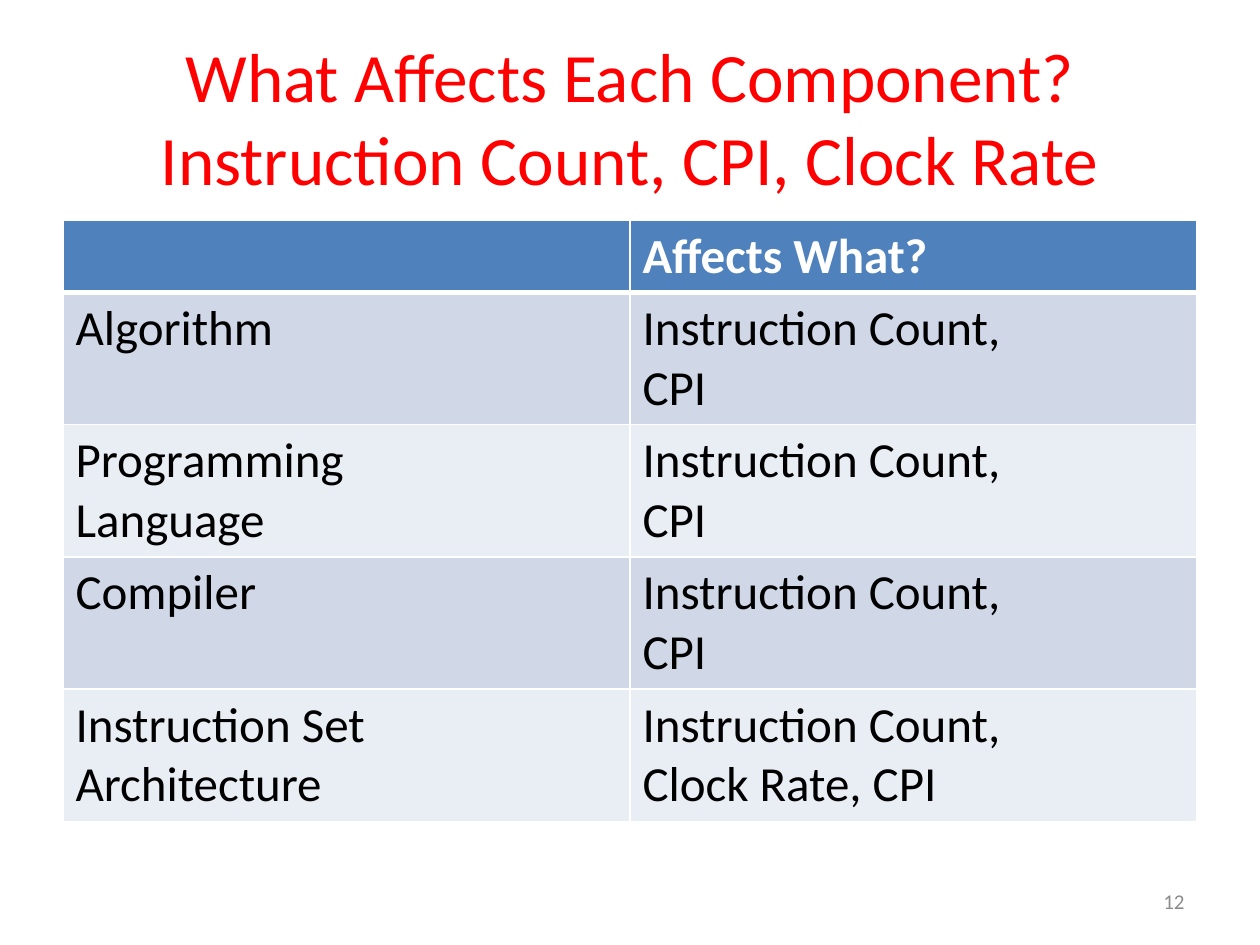
from lxml import etree
from pptx import Presentation
from pptx.dml.color import RGBColor
from pptx.enum.text import MSO_ANCHOR, PP_ALIGN
from pptx.oxml.ns import qn
from pptx.util import Inches, Pt

LEFT, CENTER, RIGHT = PP_ALIGN.LEFT, PP_ALIGN.CENTER, PP_ALIGN.RIGHT
MIDDLE = MSO_ANCHOR.MIDDLE

TITLE = "What Affects Each Component? Instruction Count, CPI, Clock Rate"
PAGE_NUMBER = "12"
ROWS = [
    ("", "Affects What?"),
    ("Algorithm", "Instruction Count,\nCPI"),
    ("Programming\nLanguage", "Instruction Count,\nCPI"),
    ("Compiler", "Instruction Count,\nCPI"),
    ("Instruction Set Architecture", "Instruction Count,\nClock Rate, CPI"),
]
HEADER_FILL = "4F81BD"
BAND_FILLS = ("E9EDF4", "D0D8E8")
WHITE = "FFFFFF"
HEADER_HEIGHT, ROW_HEIGHT = 0.57, 1.05


def color(value):
    return RGBColor.from_string(value)


def write(frame, text, size=28, fill="000000", bold=False, align=LEFT):
    para = frame.paragraphs[0]
    para.text = text
    para.alignment = align
    for span in para.runs:
        span.font.name = "Calibri"
        span.font.size = Pt(size)
        span.font.bold = bold
        span.font.color.rgb = color(fill)


def add_text(page, text, left, top, width, height, **style):
    frame = page.shapes.add_textbox(
        Inches(left), Inches(top), Inches(width), Inches(height)).text_frame
    frame.word_wrap = True
    frame.vertical_anchor = MIDDLE
    write(frame, text, **style)


def set_borders(cell, **widths):
    """Draw white cell borders; widths are points for the sides L, R, T and B."""
    properties = cell._tc.get_or_add_tcPr()
    for side, width in widths.items():
        line = etree.SubElement(properties, qn(f"a:ln{side}"), w=str(Pt(width)))
        paint = etree.SubElement(line, qn("a:solidFill"))
        etree.SubElement(paint, qn("a:srgbClr"), val=WHITE)


def add_effects_table(page):
    height = HEADER_HEIGHT + ROW_HEIGHT * (len(ROWS) - 1)
    table = page.shapes.add_table(
        len(ROWS), len(ROWS[0]), Inches(0.5), Inches(1.75),
        Inches(9), Inches(height)).table
    for index, texts in enumerate(ROWS):
        header = index == 0
        table.rows[index].height = Inches(HEADER_HEIGHT if header else ROW_HEIGHT)
        for column, text in enumerate(texts):
            cell = table.cell(index, column)
            set_borders(cell, L=1, R=1, T=3 if index == 1 else 1,
                        B=3 if header else 1)
            cell.fill.solid()
            cell.fill.fore_color.rgb = color(
                HEADER_FILL if header else BAND_FILLS[index % 2])
            write(cell.text_frame, text, bold=header,
                  fill=WHITE if header else "000000")


def main():
    deck = Presentation()
    deck.slide_width, deck.slide_height = Inches(10), Inches(7.5)
    page = deck.slides.add_slide(deck.slide_layouts[6])
    add_text(page, TITLE, 0.5, 0.3, 9, 1.25, size=39.6, fill="FF0000", align=CENTER)
    add_effects_table(page)
    add_text(page, PAGE_NUMBER, 7.17, 6.95, 2.33, 0.4, size=12, fill="8C8C8C",
             align=RIGHT)
    deck.save("out.pptx")


if __name__ == "__main__":
    main()
